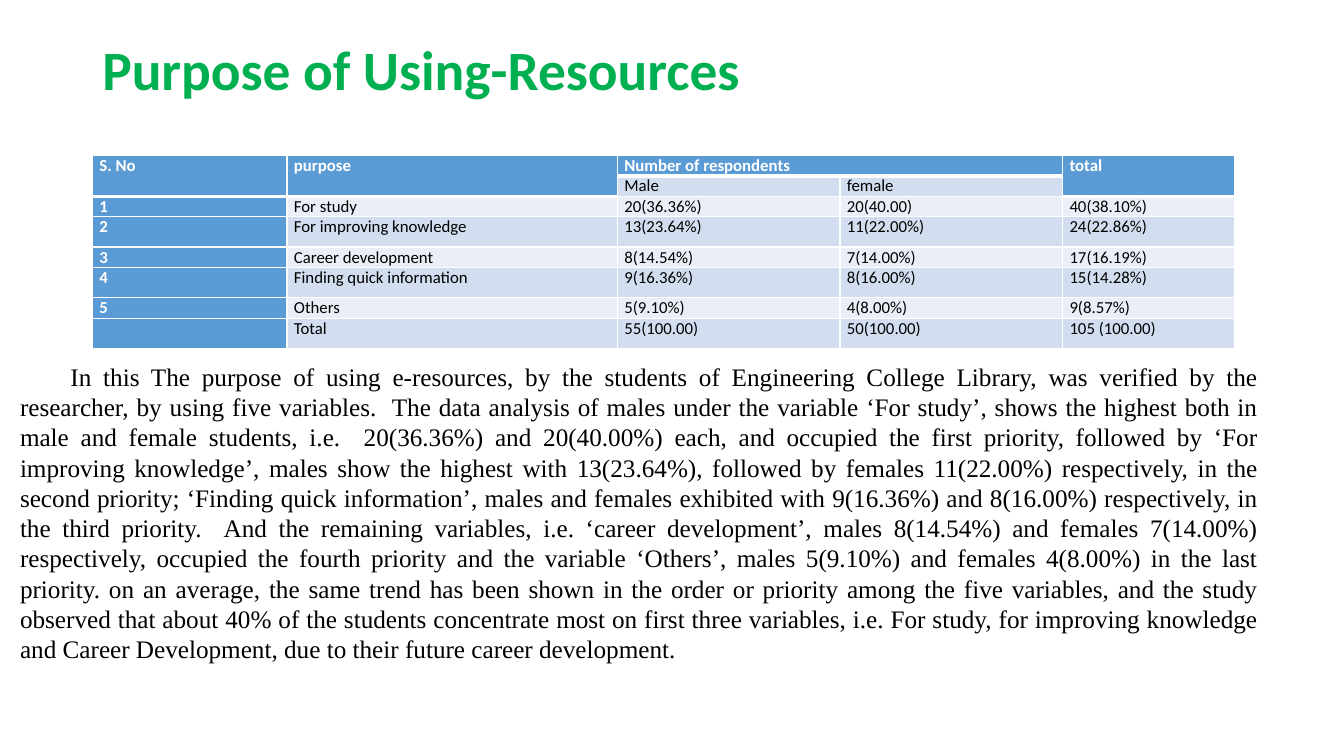
import lxml.etree
import pptx
import pptx.dml.color
import pptx.enum.text
import pptx.oxml.ns
import pptx.util

Pt = pptx.util.Pt
ALIGN = pptx.enum.text.PP_ALIGN
ANCHOR = pptx.enum.text.MSO_ANCHOR

COLORS = {
    "title": "00B050",
    "header": "5B9BD5",
    "light": "EAEFF7",
    "dark": "D2DEEF",
    "white": "FFFFFF",
    "black": "000000",
}

COLUMN_WIDTHS = [139, 236, 159, 159, 123]
ROW_HEIGHTS = [14.64, 14.64, 14.64, 21.6, 14.64, 21.6, 14.64, 21.6]
MERGES = [((0, 0), (1, 0)), ((0, 1), (1, 1)), ((0, 2), (0, 3)), ((0, 4), (1, 4))]
RESPONDENTS = [
    ["S. No", "purpose", "Number of respondents ", "", "total"],
    ["", "", "Male", "female", ""],
    ["1", "For study", "20(36.36%)", "20(40.00)", "40(38.10%)"],
    ["2", "For improving knowledge", "13(23.64%)", "11(22.00%)", "24(22.86%)"],
    ["3", "Career development", "8(14.54%)", "7(14.00%)", "17(16.19%)"],
    ["4", "Finding quick information", "9(16.36%)", "8(16.00%)", "15(14.28%)"],
    ["5", "Others", "5(9.10%)", "4(8.00%)", "9(8.57%)"],
    ["", "Total ", "55(100.00)", "50(100.00)", "105 (100.00)"],
]
DISCUSSION = [
    "In this The purpose of using e-resources, by the students of Engineering College Library, "
    "was verified by the researcher, by using five variables.  ",
    "The data analysis of males under the variable ‘For study’, shows the highest both in male "
    "and female students, i.e.  20(36.36%) and 20(40.00%) each, and occupied the first priority, "
    "followed by ‘For improving knowledge’, males show the highest with 13(23.64%), followed by "
    "females 11(22.00%) respectively, in the second priority; ‘Finding quick information’, males "
    "and females exhibited with 9(16.36%) and 8(16.00%) respectively, in the third priority.  ",
    "And the remaining variables, i.e. ‘career development’, males 8(14.54%) and females "
    "7(14.00%) respectively, occupied the fourth priority and the variable ‘Others’, males "
    "5(9.10%) and females 4(8.00%) in the last priority. ",
    "on an average, the same trend has been shown in the order or priority among the five "
    "variables, and the study observed that about 40% of the students concentrate most on first "
    "three variables, i.e. For study, for improving knowledge and Career Development, due to "
    "their future career development.",
]


def rgb(name):
    return pptx.dml.color.RGBColor.from_string(COLORS[name])


def add_run(paragraph, text, size, color, font="Calibri", bold=False):
    run = paragraph.add_run()
    run.text = text
    run.font.name = font
    run.font.size = Pt(size)
    run.font.bold = bold
    run.font.color.rgb = rgb(color)


def add_text_frame(slide, left, top, width, height):
    shape = slide.shapes.add_textbox(Pt(left), Pt(top), Pt(width), Pt(height))
    shape.text_frame.word_wrap = True
    return shape.text_frame


def add_title(slide, left, top, width, height):
    frame = add_text_frame(slide, left, top, width, height)
    frame.vertical_anchor = ANCHOR.MIDDLE
    paragraph = frame.paragraphs[0]
    paragraph.line_spacing = 0.9
    add_run(paragraph, "Purpose of Using-Resources", 39.6, "title", bold=True)


def set_borders(cell, bottom_width):
    properties = cell._tc.get_or_add_tcPr()
    for side, width in (("L", 1), ("R", 1), ("T", 1), ("B", bottom_width)):
        line = lxml.etree.SubElement(properties, pptx.oxml.ns.qn("a:ln" + side), w=str(Pt(width)))
        fill = lxml.etree.SubElement(line, pptx.oxml.ns.qn("a:solidFill"))
        lxml.etree.SubElement(fill, pptx.oxml.ns.qn("a:srgbClr"), val=COLORS["white"])


def fill_cell(cell, text, row, column):
    in_header = row == 0 or (row == 1 and column in (0, 1, 4))
    emphasized = in_header or column == 0
    set_borders(cell, 3 if in_header else 1)
    cell.fill.solid()
    cell.fill.fore_color.rgb = rgb("header" if emphasized else "dark" if row % 2 else "light")
    cell.margin_left = cell.margin_right = Pt(5)
    cell.margin_top = cell.margin_bottom = 0
    paragraph = cell.text_frame.paragraphs[0]
    paragraph.alignment = ALIGN.JUSTIFY
    if text:
        add_run(paragraph, text, 12, "white" if emphasized else "black", bold=emphasized)
    else:
        paragraph.font.size = Pt(12)


def add_respondents_table(slide, left, top):
    table = slide.shapes.add_table(
        len(ROW_HEIGHTS), len(COLUMN_WIDTHS), Pt(left), Pt(top),
        Pt(sum(COLUMN_WIDTHS)), Pt(sum(ROW_HEIGHTS)),
    ).table
    for column, width in zip(table.columns, COLUMN_WIDTHS):
        column.width = Pt(width)
    for row, height in zip(table.rows, ROW_HEIGHTS):
        row.height = Pt(height)
    for row, texts in enumerate(RESPONDENTS):
        for column, text in enumerate(texts):
            fill_cell(table.cell(row, column), text, row, column)
    for first, last in MERGES:
        table.cell(*first).merge(table.cell(*last))


def add_discussion(slide, left, top, width, height):
    frame = add_text_frame(slide, left, top, width, height)
    paragraph = frame.paragraphs[0]
    paragraph.alignment = ALIGN.JUSTIFY
    paragraph.line_spacing = Pt(21.6)
    paragraph._p.get_or_add_pPr().set("indent", str(Pt(36)))
    for sentence in DISCUSSION:
        add_run(paragraph, sentence, 18, "black", font="Times New Roman")


def main():
    presentation = pptx.Presentation()
    presentation.slide_width = Pt(960)
    presentation.slide_height = Pt(540)
    slide = presentation.slides.add_slide(presentation.slide_layouts[6])
    add_title(slide, 66, 28.5, 828, 47)
    add_respondents_table(slide, 66, 111)
    add_discussion(slide, 7.2, 254.5, 899, 223.2)
    presentation.save("out.pptx")


if __name__ == "__main__":
    main()
